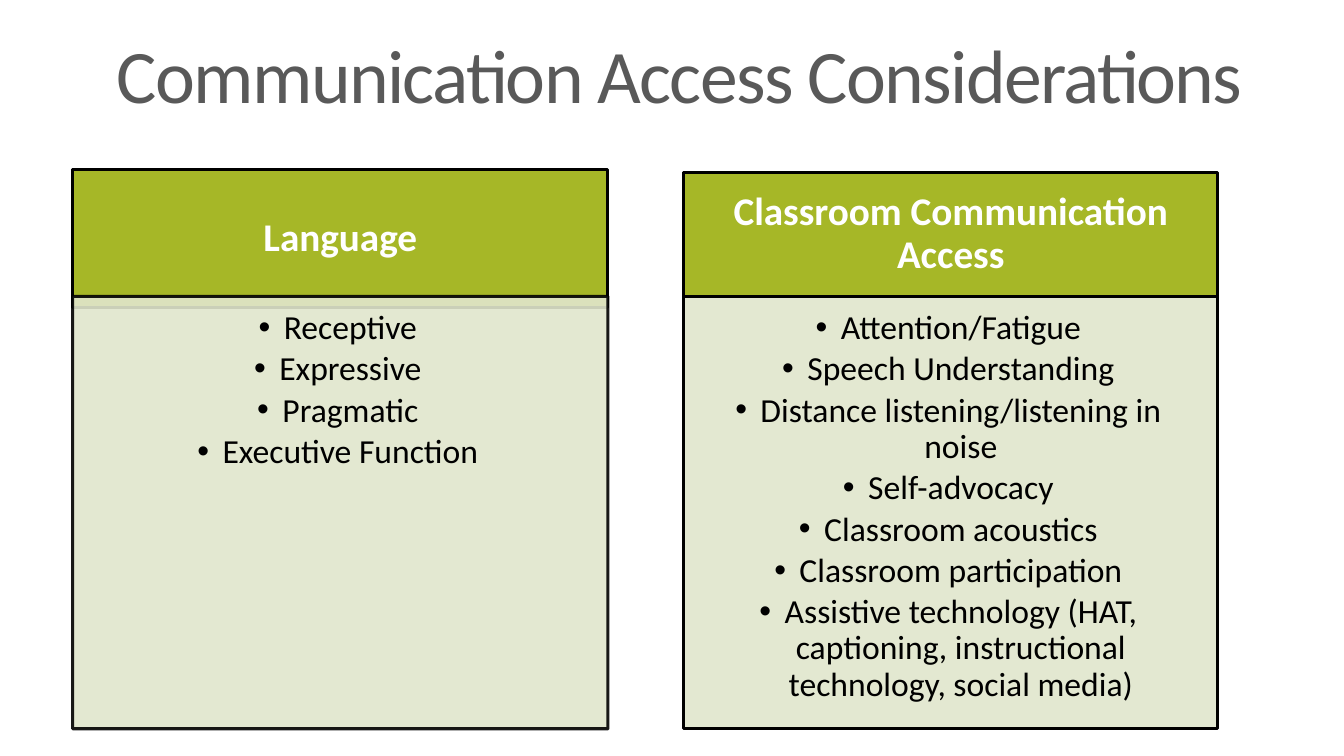
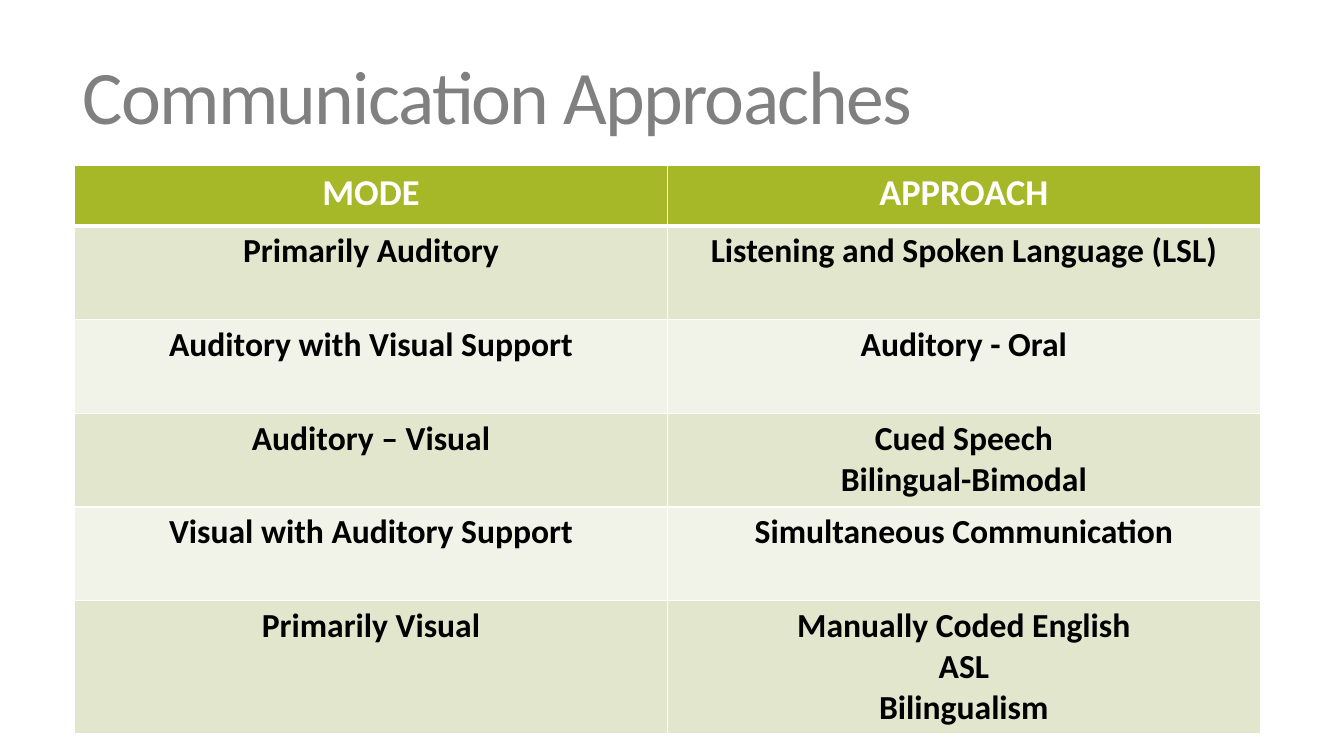
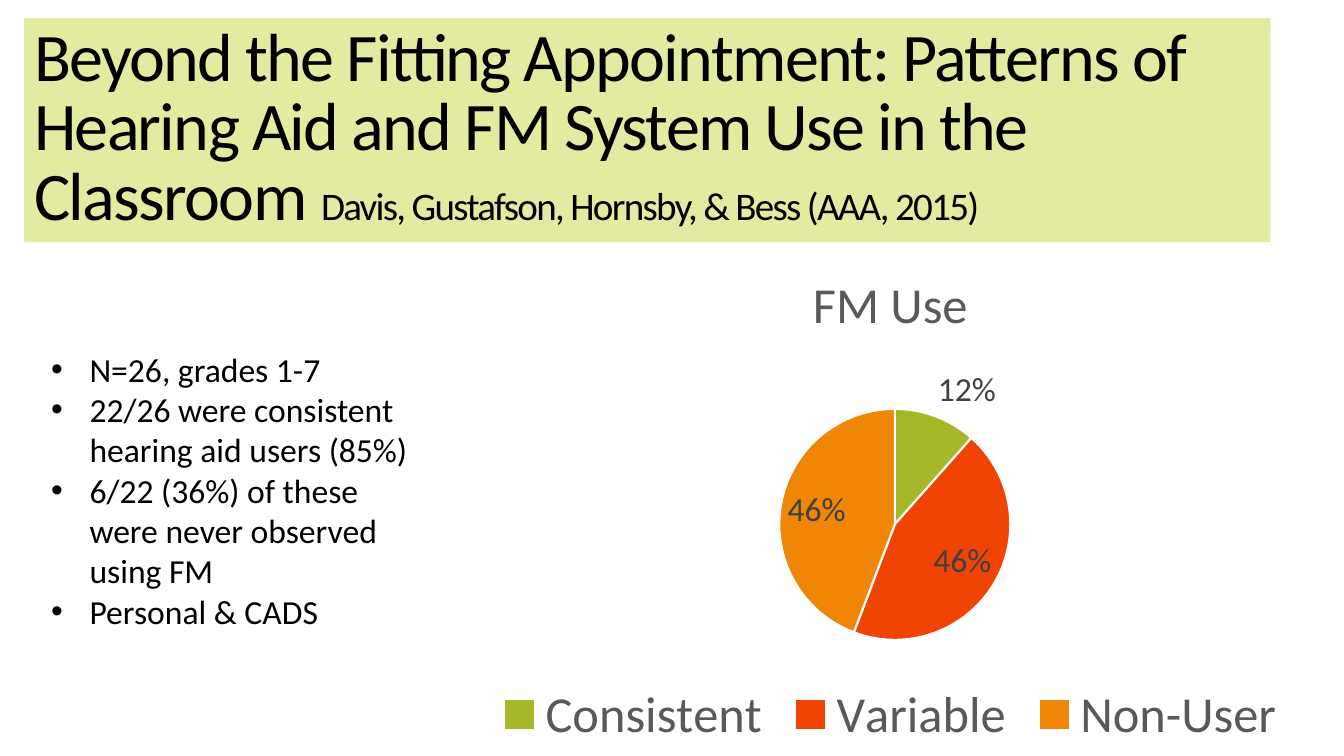
from lxml.etree import SubElement
from pptx import Presentation
from pptx.chart.data import CategoryChartData
from pptx.dml.color import RGBColor
from pptx.enum.chart import XL_CHART_TYPE as ChartType
from pptx.enum.chart import XL_LABEL_POSITION as LabelPosition
from pptx.enum.chart import XL_LEGEND_POSITION as LegendPosition
from pptx.enum.shapes import MSO_SHAPE as Shape
from pptx.enum.text import MSO_ANCHOR as Anchor
from pptx.enum.text import PP_ALIGN as Align
from pptx.oxml.ns import qn
from pptx.util import Emu, Pt

FONT = "Calibri"
WHITE = RGBColor(0xFF, 0xFF, 0xFF)
BLACK = RGBColor(0x00, 0x00, 0x00)
DARK_GREY = RGBColor(0x59, 0x59, 0x59)
LABEL_GREY = RGBColor(0x40, 0x40, 0x40)
MID_GREY = RGBColor(0x80, 0x80, 0x80)
GREEN = RGBColor(0xA6, 0xB7, 0x27)
PALE_GREEN = RGBColor(0xE1, 0xE6, 0xCD)
FAINT_GREEN = RGBColor(0xF1, 0xF3, 0xE8)
LIME = RGBColor(0xE2, 0xEB, 0xA0)
RED = RGBColor(0xF0, 0x43, 0x04)
ORANGE = RGBColor(0xEF, 0x86, 0x06)

LANGUAGE = ["Receptive", "Expressive", "Pragmatic", "Executive Function"]
CLASSROOM = [
    "Attention/Fatigue",
    "Speech Understanding",
    "Distance listening/listening in noise",
    "Self-advocacy",
    "Classroom acoustics",
    "Classroom participation",
    "Assistive technology (HAT, captioning, instructional technology, social media)",
]
APPROACHES = [
    ("MODE", "APPROACH"),
    ("Primarily Auditory", "Listening and Spoken Language (LSL)"),
    ("Auditory with Visual Support", "Auditory - Oral"),
    ("Auditory – Visual", "Cued Speech\nBilingual-Bimodal"),
    ("Visual with Auditory Support", "Simultaneous Communication"),
    ("Primarily Visual", "Manually Coded English\nASL\nBilingualism"),
]
ROW_HEIGHTS = [60, 93, 93, 93, 93, 132]
FINDINGS = [
    "N=26, grades 1-7",
    "22/26 were consistent hearing aid users (85%)",
    "6/22 (36%) of these were never observed using FM",
    "Personal & CADS",
]
FM_USE = [("Consistent", 0.12, GREEN), ("Variable", 0.46, RED), ("Non-User", 0.46, ORANGE)]


def px(count):
    """Turn whole pixels, 100 to the inch, into EMU."""
    return Emu(count * 9144)


def style(font, size, color, bold=False):
    """Set the typeface, size, colour and weight of a font."""
    font.name = FONT
    font.size = Pt(size)
    font.bold = bold
    font.color.rgb = color


def add_page(deck):
    """Add a slide on the blank layout."""
    return deck.slides.add_slide(deck.slide_layouts[6])


def add_title(page, area, parts, color, fill=None):
    """Add a tightly spaced title made of (text, size) parts."""
    box = page.shapes.add_textbox(*map(px, area))
    if fill is not None:
        box.fill.solid()
        box.fill.fore_color.rgb = fill
    frame = box.text_frame
    frame.word_wrap = True
    frame.vertical_anchor = Anchor.MIDDLE
    para = frame.paragraphs[0]
    para.line_spacing = 0.85
    for text, size in parts:
        span = para.add_run()
        span.text = text
        style(span.font, size, color)
        span.font._element.set("spc", "-120")


def set_opacity(fill, percent):
    """Make a solid fill partly transparent."""
    color = fill._xPr.find(qn("a:solidFill"))[0]
    SubElement(color, qn("a:alpha"), val=str(percent * 1000))


def add_panel(page, area, fill, insets):
    """Add a black-edged rectangle and return it."""
    panel = page.shapes.add_shape(Shape.RECTANGLE, *map(px, area))
    panel.shadow.inherit = False
    panel.fill.solid()
    panel.fill.fore_color.rgb = fill
    panel.line.color.rgb = BLACK
    panel.line.width = Pt(2.25)
    frame = panel.text_frame
    frame.word_wrap = True
    frame.margin_left, frame.margin_top, frame.margin_right, frame.margin_bottom = map(px, insets)
    return panel


def write_bullets(frame, items, indent, align=Align.LEFT, line_spacing=None, space_after=0):
    """Fill a text frame with bulleted paragraphs."""
    frame.text = "\n".join(items)
    for para in frame.paragraphs:
        properties = para._p.get_or_add_pPr()
        properties.set("marL", str(px(indent)))
        properties.set("indent", str(px(-indent)))
        SubElement(properties, qn("a:buFont"), typeface="Arial")
        SubElement(properties, qn("a:buChar"), char="•")
        para.alignment = align
        para.line_spacing = line_spacing
        para.space_after = Pt(space_after)
        style(para.font, 24, BLACK)


def add_card(page, left, top, width, header_height, heading, items, edge_opacity=100):
    """Add a green heading over a translucent panel of bullets."""
    header = add_panel(page, (left, top, width, header_height), GREEN, (22, 12, 22, 12))
    header.text_frame.vertical_anchor = Anchor.MIDDLE
    para = header.text_frame.paragraphs[0]
    para.text = heading
    para.alignment = Align.CENTER
    para.line_spacing = 0.9
    style(para.font, 28, WHITE, True)
    body = add_panel(page, (left, 294, width, 429), PALE_GREEN, (14, 14, 19, 21))
    set_opacity(body.fill, 90)
    set_opacity(body.line.fill, edge_opacity)
    body.text_frame.vertical_anchor = Anchor.TOP
    write_bullets(body.text_frame, items, 25, Align.CENTER, 0.9, 3.6)


def add_border(cell, side, width):
    """Draw one white edge of a table cell."""
    edge = SubElement(cell._tc.get_or_add_tcPr(), qn(f"a:ln{side}"), w=str(Pt(width)))
    SubElement(SubElement(edge, qn("a:solidFill")), qn("a:srgbClr"), val=str(WHITE))


def fill_cell(cell, text, fill, size, color, edges):
    """Write a centred bold cell with its fill and edges."""
    cell.text = text
    for side, width in edges.items():
        add_border(cell, side, width)
    cell.fill.solid()
    cell.fill.fore_color.rgb = fill
    for para in cell.text_frame.paragraphs:
        para.alignment = Align.CENTER
        style(para.font, size, color, True)


def add_approach_table(page):
    """Add the table of modes and approaches."""
    area = map(px, (74, 164, 1176, sum(ROW_HEIGHTS)))
    table = page.shapes.add_table(len(APPROACHES), 2, *area).table
    for index, texts in enumerate(APPROACHES):
        table.rows[index].height = px(ROW_HEIGHTS[index])
        for cell, text in zip(table.rows[index].cells, texts):
            if index == 0:
                fill_cell(cell, text, GREEN, 26, WHITE, {"L": 1, "R": 1, "T": 1, "B": 3})
            else:
                fill = PALE_GREEN if index % 2 else FAINT_GREEN
                fill_cell(cell, text, fill, 24, BLACK, {"L": 1, "R": 1, "B": 1})


def add_use_chart(page):
    """Add the pie chart of FM use."""
    data = CategoryChartData(number_format="0%")
    data.categories = [name for name, _, _ in FM_USE]
    data.add_series("FM Use", [value for _, value, _ in FM_USE])
    area = map(px, (274, 243, 1218, 507))
    chart = page.shapes.add_chart(ChartType.PIE, *area, data).chart
    style(chart.font, 10, BLACK)
    chart.has_title = True
    title = chart.chart_title
    title.include_in_layout = False
    title.text_frame.text = "FM Use"
    style(title.text_frame.paragraphs[0].runs[0].font, 36, DARK_GREY)
    chart.has_legend = True
    chart.legend.position = LegendPosition.BOTTOM
    chart.legend.include_in_layout = False
    style(chart.legend.font, 36, DARK_GREY)
    plot = chart.plots[0]
    plot.vary_by_categories = True
    for index, (_, _, color) in enumerate(FM_USE):
        slice_format = plot.series[0].points[index].format
        slice_format.fill.solid()
        slice_format.fill.fore_color.rgb = color
        slice_format.line.color.rgb = WHITE
        slice_format.line.width = Pt(1.5)
    labels = plot.series[0].data_labels
    labels.show_value = True
    labels.show_percentage = False
    labels.number_format = "0%"
    labels.number_format_is_linked = False
    labels.position = LabelPosition.BEST_FIT
    style(labels.font, 24, LABEL_GREY)


def add_findings(page):
    """Add the bulleted study findings."""
    frame = page.shapes.add_textbox(*map(px, (41, 341, 375, 333))).text_frame
    frame.word_wrap = True
    write_bullets(frame, FINDINGS, 38)


def main():
    """Build and save the three slides."""
    deck = Presentation()
    deck.slide_width, deck.slide_height = px(1333), px(750)

    page = add_page(deck)
    add_title(page, (106, 33, 1178, 94), [("Communication Access Considerations", 54)], DARK_GREY)
    add_card(page, 72, 168, 531, 137, "Language", LANGUAGE, 90)
    add_card(page, 678, 171, 530, 123, "Classroom Communication Access", CLASSROOM)

    page = add_page(deck)
    add_title(page, (72, 55, 1178, 91), [("Communication Approaches", 54)], MID_GREY)
    add_approach_table(page)

    page = add_page(deck)
    study = "Beyond the Fitting Appointment: Patterns of Hearing Aid and FM System Use in the Classroom "
    authors = "Davis, Gustafson, Hornsby, & Bess (AAA, 2015)"
    add_title(page, (24, 18, 1236, 222), [(study, 48.6), (authors, 27.9)], BLACK, LIME)
    add_use_chart(page)
    add_findings(page)

    deck.save("out.pptx")


if __name__ == "__main__":
    main()
